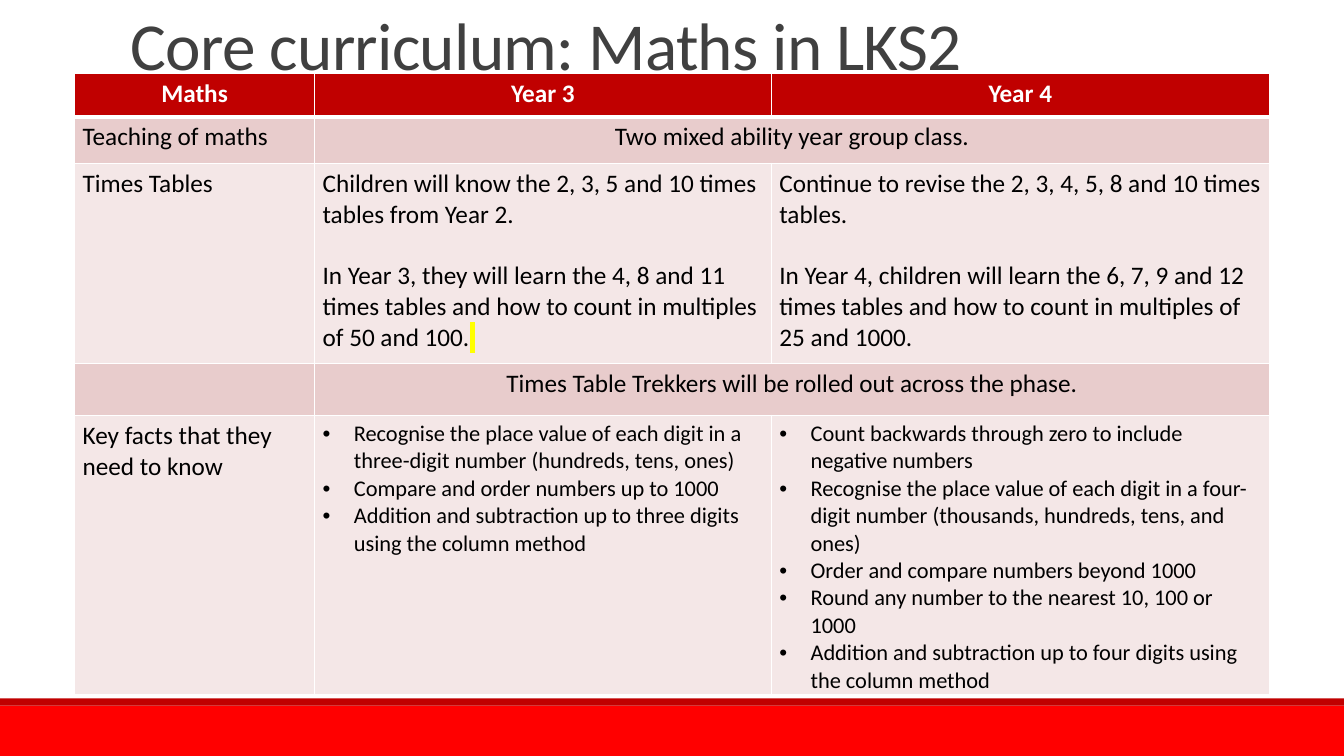
from lxml import etree
from pptx import Presentation
from pptx import util as u
from pptx.dml.color import RGBColor
from pptx.enum import shapes, text
from pptx.oxml import ns

RED, DARK_RED, WHITE, BLACK = "FF0000", "C00000", "FFFFFF", "000000"
TITLE_GREY, BAND_DARK, BAND_LIGHT, YELLOW = "404040", "E8CCCC", "F4E7E7", "FFFF00"
CENTER, LEFT = text.PP_ALIGN.CENTER, text.PP_ALIGN.LEFT


def rgb(value):
    return RGBColor.from_string(value)


def apply(target, values):
    for name, value in values.items():
        setattr(target, name, value)


def add_color(parent, tag, color):
    element = etree.SubElement(parent, ns.qn(tag))
    etree.SubElement(element, ns.qn("a:srgbClr"), val=color)
    return element


class SlideBuilder:
    font_name = "Calibri"
    cell_format = dict(margin_left=u.Inches(0.08), margin_right=u.Inches(0.08),
                       margin_top=u.Inches(0.05), margin_bottom=u.Inches(0.05))

    def __init__(self, slide):
        self.slide = slide

    def bar(self, top, height, color):
        shape = self.slide.shapes.add_shape(
            shapes.MSO_SHAPE.RECTANGLE, 0, u.Inches(top), u.Inches(13.33), u.Inches(height))
        shape.shadow.inherit = False
        shape.fill.solid()
        shape.fill.fore_color.rgb = rgb(color)
        shape.line.fill.background()

    def run(self, paragraph, words, size, color, bold=False):
        """Add a run and return its properties element."""
        run = paragraph.add_run()
        run.text = words
        apply(run.font, dict(name=self.font_name, size=u.Pt(size), bold=bold))
        run.font.color.rgb = rgb(color)
        return run._r.get_or_add_rPr()

    def title(self, words, left, top, width, height):
        shape = self.slide.shapes.add_textbox(*map(u.Inches, (left, top, width, height)))
        apply(shape.text_frame, dict(word_wrap=True, vertical_anchor=text.MSO_ANCHOR.BOTTOM))
        paragraph = shape.text_frame.paragraphs[0]
        paragraph.line_spacing = 0.85
        self.run(paragraph, words, 48, TITLE_GREY).set("spc", "-50")

    def table(self, left, top, columns, rows):
        sizes = map(u.Inches, (left, top, sum(columns), sum(rows)))
        table = self.slide.shapes.add_table(len(rows), len(columns), *sizes).table
        for column, width in zip(table.columns, columns):
            column.width = u.Inches(width)
        for row, height in zip(table.rows, rows):
            row.height = u.Inches(height)
        return table

    def cell(self, cell, fill, top_width, bottom_width):
        apply(cell, self.cell_format)
        cell.fill.solid()
        cell.fill.fore_color.rgb = rgb(fill)
        properties = cell._tc.get_or_add_tcPr()
        widths = dict(L=1, R=1, T=top_width, B=bottom_width)
        for index, (side, width) in enumerate(widths.items()):
            border = etree.Element(ns.qn("a:ln" + side), w=str(u.Pt(width)))
            add_color(border, "a:solidFill", WHITE)
            properties.insert(index, border)

    def paragraphs(self, cell, lines, align=LEFT, size=18, color=BLACK, bold=False,
                   gap=0, bullet=False):
        frame = cell.text_frame
        for index, words in enumerate(lines):
            paragraph = frame.add_paragraph() if index else frame.paragraphs[0]
            apply(paragraph, dict(alignment=align, space_before=u.Pt(gap if index else 0)))
            if bullet:
                properties = paragraph._p.get_or_add_pPr()
                properties.set("marL", str(u.Inches(0.31)))
                properties.set("indent", str(u.Inches(-0.31)))
                etree.SubElement(properties, ns.qn("a:buFont"), typeface="Arial")
                etree.SubElement(properties, ns.qn("a:buChar"), char="•")
            self.run(paragraph, words, size, color, bold)

    def highlighted_space(self, paragraph):
        properties = self.run(paragraph, " ", 18, BLACK)
        highlight = add_color(properties, "a:highlight", YELLOW)
        properties.find(ns.qn("a:solidFill")).addnext(highlight)


HEADER = dict(align=CENTER, color=WHITE, bold=True)
MERGED = dict(align=CENTER)
SPACED = dict(gap=22)
BULLETS = dict(size=16, bullet=True)

# Each row: label, its format, then the year cells and their format
CURRICULUM = [
    (["Maths"], HEADER, [["Year 3"], ["Year 4"]], HEADER),
    (["Teaching of maths"], {}, [["Two mixed ability year group class."]], MERGED),
    (["Times Tables"], {}, [
        ["Children will know the 2, 3, 5 and 10 times tables from Year 2.",
         "In Year 3, they will learn the 4, 8 and 11 times tables and how to count in "
         "multiples of 50 and 100."],
        ["Continue to revise the 2, 3, 4, 5, 8 and 10 times tables.",
         "In Year 4, children will learn the 6, 7, 9 and 12 times tables and how to count in "
         "multiples of 25 and 1000."]], SPACED),
    ([], {}, [["Times Table Trekkers will be rolled out across the phase."]], MERGED),
    (["Key facts that they need to know"], {}, [
        ["Recognise the place value of each digit in a three-digit number "
         "(hundreds, tens, ones)",
         "Compare and order numbers up to 1000",
         "Addition and subtraction up to three digits using the column method"],
        ["Count backwards through zero to include negative numbers",
         "Recognise the place value of each digit in a four-digit number "
         "(thousands, hundreds, tens, and ones)",
         "Order and compare numbers beyond 1000",
         "Round any number to the nearest 10, 100 or 1000",
         "Addition and subtraction up to four digits using the column method"]], BULLETS),
]


def main():
    presentation = Presentation()
    apply(presentation, dict(slide_width=u.Inches(13.33), slide_height=u.Inches(7.5)))
    builder = SlideBuilder(presentation.slides.add_slide(presentation.slide_layouts[6]))

    # Footer bars and title
    builder.bar(7, 0.5, RED)
    builder.bar(6.93, 0.07, DARK_RED)
    builder.title("Core curriculum: Maths in LKS2", 1.2, 0, 11, 0.88)

    # Curriculum table
    table = builder.table(0.74, 0.73, [2.38, 4.53, 4.94], [0.43, 0.46, 1.99, 0.51, 2.77])
    for row, (label, label_format, years, year_format) in enumerate(CURRICULUM):
        fill = DARK_RED if row == 0 else (BAND_DARK if row % 2 else BAND_LIGHT)
        for column in range(3):
            builder.cell(table.cell(row, column), fill,
                         3 if row == 1 else 1, 3 if row == 0 else 1)
        if len(years) == 1:
            table.cell(row, 1).merge(table.cell(row, 2))
        builder.paragraphs(table.cell(row, 0), label, **label_format)
        for column, lines in enumerate(years, 1):
            builder.paragraphs(table.cell(row, column), lines, **year_format)

    # Yellow mark after the Year 3 times tables
    builder.highlighted_space(table.cell(2, 1).text_frame.paragraphs[-1])

    presentation.save("out.pptx")


if __name__ == "__main__":
    main()
